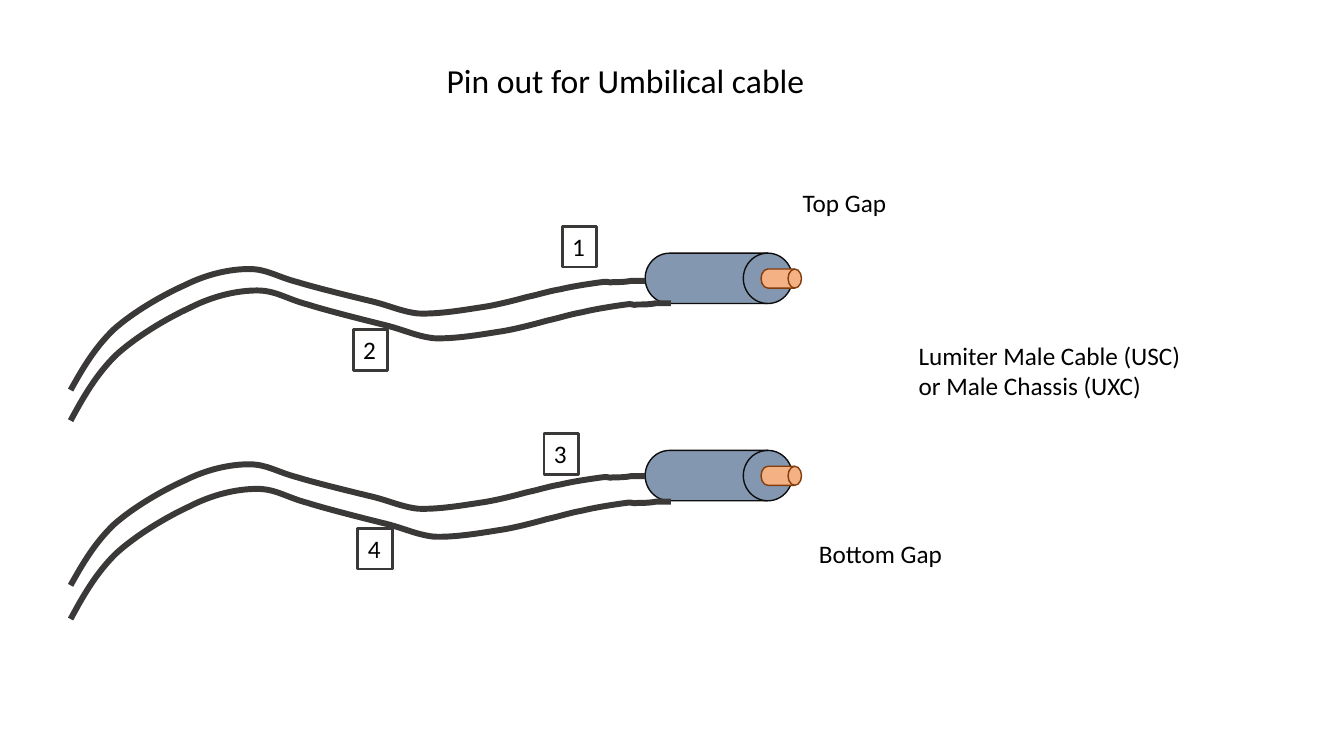
from lxml.etree import SubElement
from pptx import Presentation
from pptx.dml.color import RGBColor
from pptx.enum.shapes import MSO_SHAPE
from pptx.enum.text import MSO_ANCHOR, MSO_AUTO_SIZE
from pptx.oxml.ns import qn
from pptx.util import Cm, Pt

BLACK = RGBColor(0x00, 0x00, 0x00)
WIRE_GREY = RGBColor(0x3B, 0x38, 0x38)
PLUG_BLUE = RGBColor(0x84, 0x97, 0xB0)
PLUG_EDGE = RGBColor(0x0D, 0x0D, 0x0D)
PIN_ORANGE = RGBColor(0xF4, 0xB1, 0x83)
PIN_EDGE = RGBColor(0x84, 0x3C, 0x0B)


def write(box, text, size):
    frame = box.text_frame
    frame.word_wrap = True
    frame.auto_size = MSO_AUTO_SIZE.SHAPE_TO_FIT_TEXT
    frame.vertical_anchor = MSO_ANCHOR.TOP
    para = frame.paragraphs[0]
    para.alignment = 1  # left
    span = para.add_run()
    span.text = text
    span.font.name = "Calibri"
    span.font.size = Pt(size)
    span.font.color.rgb = BLACK


def outline(shape, color, width):
    shape.shadow.inherit = False
    shape.line.color.rgb = color
    shape.line.width = Pt(width)


deck = Presentation()
deck.slide_width, deck.slide_height = Cm(33.87), Cm(19.05)
page = deck.slides.add_slide(deck.slide_layouts[5])

# Title
title = page.shapes.title
title.left, title.top, title.width, title.height = Cm(11), Cm(1.38), Cm(13.28), Cm(1.28)
write(title, "Pin out for Umbilical cable", 24)

# Plugs, each a drum with a smaller drum as its pin
for plug_top in (11.35, 6.38):
    plug = page.shapes.add_group_shape()
    for left, top, width, height, fill, edge in (
        (16.26, plug_top, 3.71, 1.27, PLUG_BLUE, PLUG_EDGE),
        (19.18, plug_top + 0.4, 1.02, 0.48, PIN_ORANGE, PIN_EDGE),
    ):
        drum = plug.shapes.add_shape(
            MSO_SHAPE.FLOWCHART_DIRECT_ACCESS_STORAGE,
            Cm(left), Cm(top), Cm(width), Cm(height))
        drum.fill.solid()
        drum.fill.fore_color.rgb = fill
        outline(drum, edge, 1)

# Wire course in cm: start point, then two control points and an end per bend
WIRE_POINTS = [
    (0, 3.05),
    (0.3, 2.51), (0.61, 1.98), (1.09, 1.52),
    (1.57, 1.09), (2.31, 0.66), (2.87, 0.41),
    (3.43, 0.13), (4.01, 0), (4.5, 0),
    (4.95, 0), (5.21, 0.2), (5.72, 0.33),
    (6.2, 0.48), (7.49, 0.79), (7.49, 0.79),
    (8.03, 0.91), (8.31, 1.07), (8.76, 1.12),
    (9.25, 1.14), (9.86, 1.04), (10.31, 0.97),
    (10.77, 0.91), (11.48, 0.71), (11.48, 0.71),
    (11.81, 0.64), (12.04, 0.56), (12.34, 0.51),
    (12.67, 0.43), (13.16, 0.36), (13.39, 0.33),
    (13.59, 0.3), (13.54, 0.36), (13.67, 0.33),
    (13.79, 0.33), (13.97, 0.33), (14.12, 0.3),
    (14.25, 0.3), (14.48, 0.3), (14.48, 0.3),
]
WIRE_LEFT = 1.78
WIDER = 15.13 / 14.48
TALLER = 3.28 / 3.05

# Four wires; the lower one of each pair is stretched a little
for wire_top, stretch_x, stretch_y in (
    (6.78, 1, 1), (11.7, 1, 1), (7.32, WIDER, TALLER), (12.32, WIDER, TALLER),
):
    course = [(Cm(WIRE_LEFT + x * stretch_x), Cm(wire_top + y * stretch_y))
              for x, y in WIRE_POINTS]
    builder = page.shapes.build_freeform(*course[0])
    builder.add_line_segments(course[1:], close=False)
    wire = builder.convert_to_shape()
    wire.fill.background()
    outline(wire, WIRE_GREY, 4.25)

    # Turn every three segments into one Bézier bend
    segments = list(wire._element.iter(qn("a:lnTo")))
    track = segments[0].getparent()
    for first in range(0, len(segments), 3):
        bend = SubElement(track, qn("a:cubicBezTo"))
        for segment in segments[first:first + 3]:
            bend.append(segment[0])
            track.remove(segment)

# Wire numbers
for number, left, top in (
    ("2", 8.9, 8.31), ("1", 14.17, 5.7), ("3", 13.71, 10.92), ("4", 9.02, 13.31),
):
    tag = page.shapes.add_shape(
        MSO_SHAPE.RECTANGLE, Cm(left), Cm(top), Cm(0.87), Cm(1.03))
    tag.fill.background()
    outline(tag, WIRE_GREY, 2)
    write(tag, number, 18)

# Labels
for text, left, top, width, height in (
    ("Lumiter Male Cable (USC) or Male Chassis (UXC)", 22.9, 8.44, 7.14, 1.8),
    ("Top Gap", 19.98, 4.6, 3.89, 1.03),
    ("Bottom Gap", 20.39, 13.44, 3.89, 1.03),
):
    label = page.shapes.add_textbox(Cm(left), Cm(top), Cm(width), Cm(height))
    write(label, text, 18)

deck.save("out.pptx")
